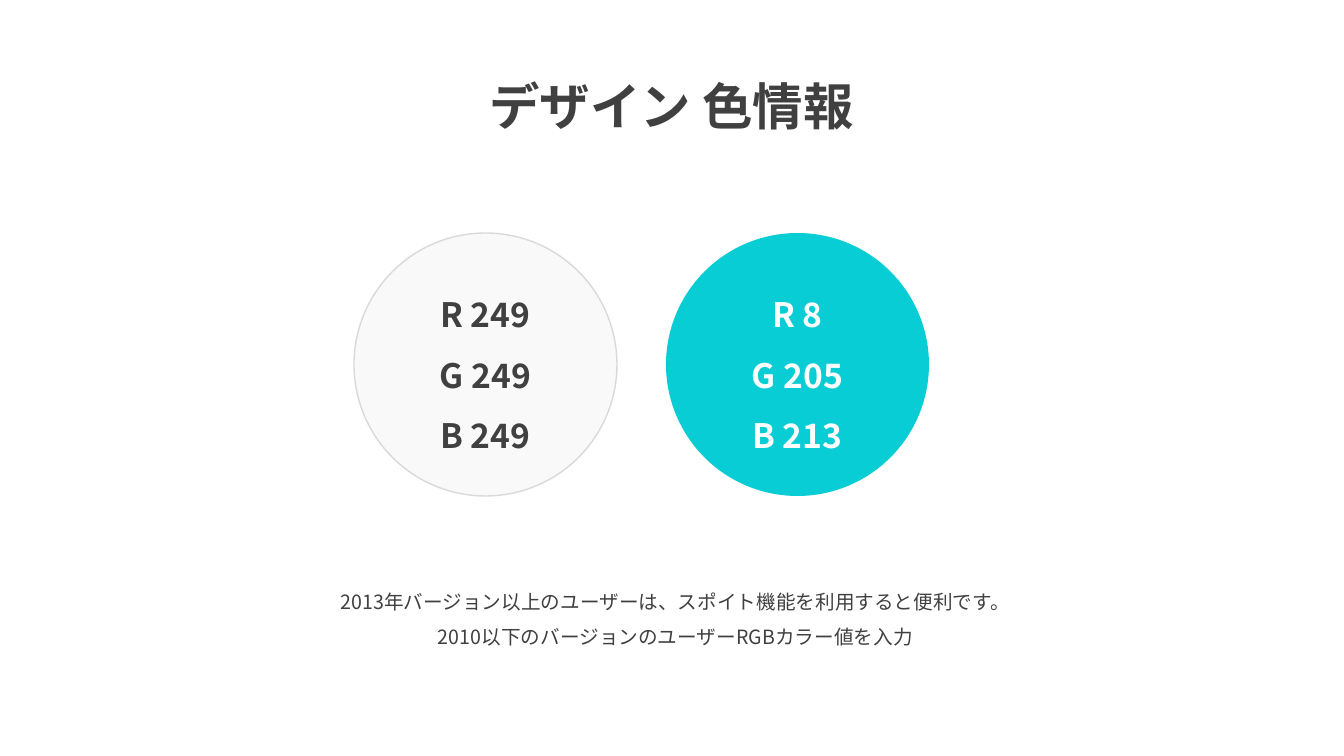
from lxml import etree
from pptx import Presentation
from pptx.dml.color import RGBColor
from pptx.enum.shapes import MSO_SHAPE
from pptx.enum.text import MSO_ANCHOR, PP_ALIGN
from pptx.oxml.ns import qn
from pptx.util import Pt

OVAL = MSO_SHAPE.OVAL
TOP, MIDDLE = MSO_ANCHOR.TOP, MSO_ANCHOR.MIDDLE
CENTER = PP_ALIGN.CENTER

FONT = "Noto Sans CJK KR"
DARK, WHITE = "404040", "FFFFFF"
PAGE_SIZE = (1344, 756)

TITLE = ["デザイン 色情報"]
TITLE_BOX = (427, 40, 489, 92)
NOTES = [
    "2013年バージョン以上のユーザーは、スポイト機能を利用すると便利です。",
    "2010以下のバージョンのユーザーRGBカラー値を入力",
]
NOTES_BOX = (254, 573, 843, 78)

SWATCHES = [
    {"rgb": (249, 249, 249), "text": DARK, "line": "D9D9D9"},
    {"rgb": (8, 205, 213), "text": WHITE, "line": None},
]
SWATCH_LEFT, SWATCH_TOP, SWATCH_SIZE, SWATCH_GAP = 354, 233, 263, 49


def px(length):
    return round(length * 914400 / 100.8)


def color(value):
    return RGBColor.from_string(value)


def write(shape, lines, size, text_color, bold=False, anchor=TOP):
    frame = shape.text_frame
    frame.word_wrap = True
    frame.vertical_anchor = anchor
    font_format = {"name": FONT, "size": Pt(size), "bold": bold}
    for index, line in enumerate(lines):
        para = frame.add_paragraph() if index else frame.paragraphs[0]
        para.alignment = CENTER
        para.line_spacing = 1.5
        span = para.add_run()
        span.text = line
        for name, value in font_format.items():
            setattr(span.font, name, value)
        span.font.color.rgb = color(text_color)
        east_asian = etree.SubElement(span.font._element, qn("a:ea"))
        east_asian.set("typeface", FONT)


def add_text(page, bounds, lines, size, bold=False):
    box = page.shapes.add_textbox(*map(px, bounds))
    write(box, lines, size, DARK, bold)


def add_swatch(page, index, swatch):
    left = SWATCH_LEFT + index * (SWATCH_SIZE + SWATCH_GAP)
    bounds = (left, SWATCH_TOP, SWATCH_SIZE, SWATCH_SIZE)
    circle = page.shapes.add_shape(OVAL, *map(px, bounds))
    circle.shadow.inherit = False
    circle.fill.solid()
    circle.fill.fore_color.rgb = RGBColor(*swatch["rgb"])
    if swatch["line"]:
        circle.line.color.rgb = color(swatch["line"])
        circle.line.width = Pt(1)
    else:
        circle.line.fill.background()
    lines = [f"{channel} {value}" for channel, value in zip("RGB", swatch["rgb"])]
    write(circle, lines, 24, swatch["text"], True, MIDDLE)


def main():
    deck = Presentation()
    deck.slide_width, deck.slide_height = map(px, PAGE_SIZE)
    page = deck.slides.add_slide(deck.slide_layouts[6])
    for index, swatch in enumerate(SWATCHES):
        add_swatch(page, index, swatch)
    add_text(page, TITLE_BOX, TITLE, 36, True)
    add_text(page, NOTES_BOX, NOTES, 14)
    deck.save("out.pptx")


if __name__ == "__main__":
    main()
